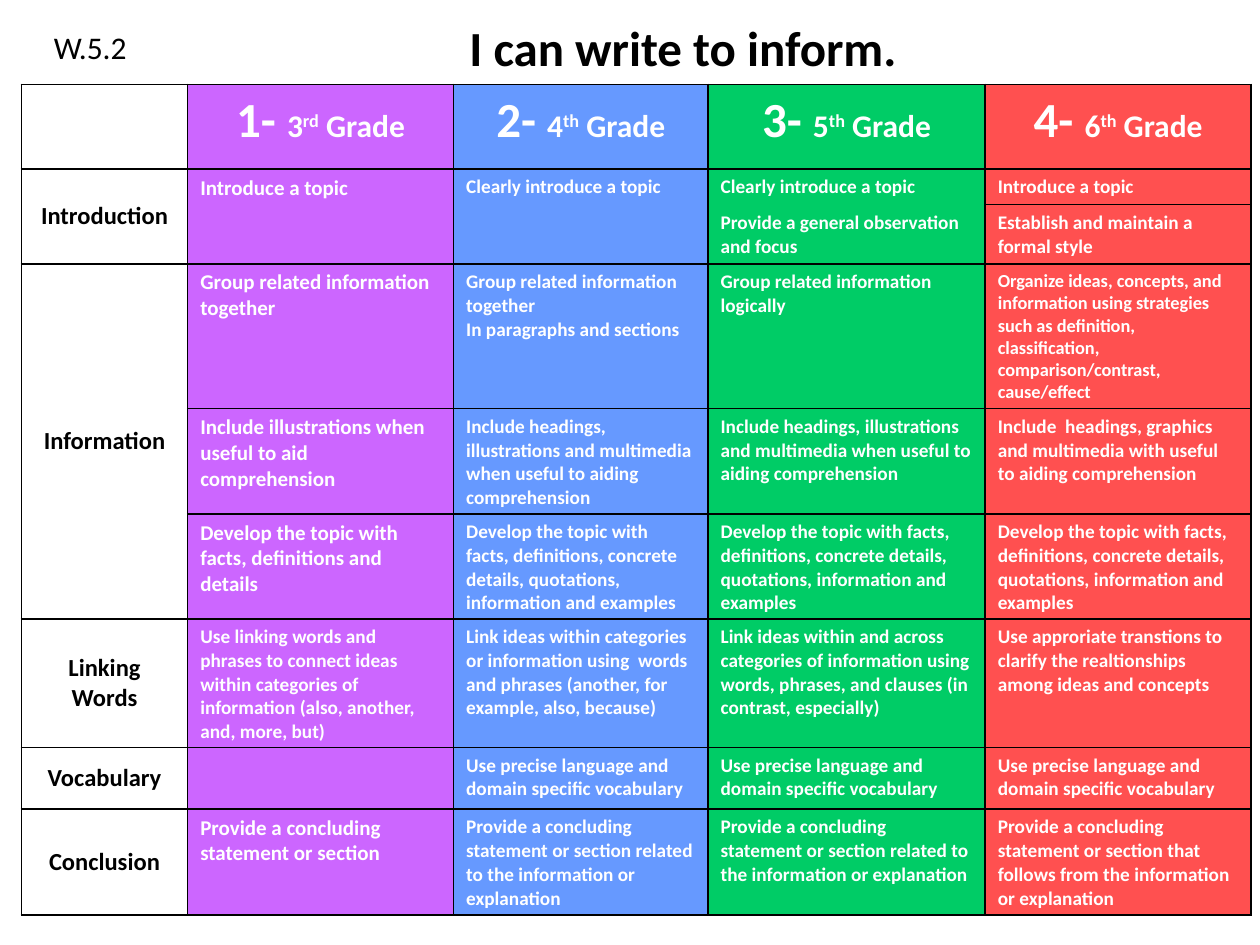
from lxml import etree
from pptx import Presentation, util as u
from pptx.dml.color import RGBColor
from pptx.enum import text
from pptx.oxml.ns import qn

THEME = {
    "font": "Calibri", "ink": "000000", "paper": "FFFFFF",
    "columns": ["FFFFFF", "CC66FF", "6699FF", "00CC66", "FF5050"],
    "title": 28, "standard": 18, "grade": 18, "category": 14,
    "column_sizes": [14, 12, 11, 11, 11], "line": 1,
}
TITLE = "I can write to inform."
STANDARD = "W.5.2"
GRADES = [("1- ", "3", "rd"), ("2- ", "4", "th"), ("3- ", "5", "th"), ("4- ", "6", "th")]
DEVELOP = ("Develop the topic with facts, definitions, concrete details, "
           "quotations, information and examples")
HEADINGS = "Include headings, illustrations and multimedia when useful to aiding comprehension"
PRECISE = "Use precise language and domain specific vocabulary"
CONCLUDE = "Provide a concluding  statement or section related to the information or explanation"
CRITERIA = [
    ["Introduction", "Introduce a topic", "Clearly introduce a topic",
     "Clearly introduce a topic", "Introduce a topic"],
    ["", "", "", "Provide a general observation and focus", ""],
    ["", "", "", "", "Establish and maintain a formal style"],
    ["Information", "Group related information together",
     "Group related information together\nIn paragraphs and sections",
     "Group related information logically",
     "Organize ideas, concepts, and information using strategies such as definition, "
     "classification, comparison/contrast, cause/effect"],
    ["", "Include illustrations when useful to aid comprehension", HEADINGS, HEADINGS,
     "Include  headings, graphics and multimedia with useful to aiding comprehension"],
    ["", "Develop the topic with facts, definitions and details", DEVELOP, DEVELOP, DEVELOP],
    ["Linking Words",
     "Use linking words and phrases to connect ideas within categories of information "
     "(also, another, and, more, but)",
     "Link ideas within categories  or information using  words and phrases "
     "(another, for example, also, because)",
     "Link ideas within and across categories of information using words, phrases, "
     "and clauses (in contrast, especially)",
     "Use approriate transtions to clarify the realtionships among ideas and concepts"],
    ["Vocabulary", "", PRECISE, PRECISE, PRECISE],
    ["Conclusion", "Provide a concluding statement or section", CONCLUDE, CONCLUDE,
     "Provide a concluding statement or section that follows from the information or explanation"],
]
SIZE_EXCEPTIONS = {(4, 4): 10.5, (7, 1): 11}
MERGES = [(0, 1, 3), (1, 1, 3), (2, 1, 3), (3, 2, 3), (4, 1, 2), (0, 4, 6)]
UNRULED = MERGES + [(3, 1, 3)]
COLUMN_WIDTHS = [1.32, 2.11, 2.02, 2.2, 2.11]
ROW_HEIGHTS = [0.67, 0.28, 0, 0.47, 1.15, 0.83, 0.83, 1.02, 0.49, 0.84]


def add_run(paragraph, words, size, color, bold=True):
    """Add one formatted run to a paragraph."""
    run = paragraph.add_run()
    run.text = words
    values = {"name": THEME["font"], "size": u.Pt(size), "bold": bold}
    for name, value in values.items():
        setattr(run.font, name, value)
    run.font.color.rgb = RGBColor.from_string(color)
    return run


def add_label(slide, words, box, size, bold, align, anchor):
    """Add a single-line text box."""
    frame = slide.shapes.add_textbox(*map(u.Inches, box)).text_frame
    frame.word_wrap = True
    frame.vertical_anchor = anchor
    frame.paragraphs[0].alignment = align
    add_run(frame.paragraphs[0], words, size, THEME["ink"], bold)


def rule_cell(cell, row, column):
    """Draw the cell's borders, leaving open the lines inside unruled blocks."""
    blocks = [block for block in UNRULED if block[0] == column]
    open_sides = {"lnT": any(first < row <= last for _, first, last in blocks),
                  "lnB": any(first <= row < last for _, first, last in blocks)}
    properties = cell._tc.get_or_add_tcPr()
    for side in ("lnL", "lnR", "lnT", "lnB"):
        line = etree.SubElement(properties, qn("a:" + side), w=str(u.Pt(THEME["line"])))
        if open_sides.get(side):
            etree.SubElement(line, qn("a:noFill"))
        else:
            fill = etree.SubElement(line, qn("a:solidFill"))
            etree.SubElement(fill, qn("a:srgbClr"), val=THEME["ink"])


def write_grade(cell, number, grade, ordinal):
    """Write a score and its grade with a raised ordinal."""
    paragraph = cell.text_frame.paragraphs[0]
    paragraph.alignment = text.PP_ALIGN.CENTER
    add_run(paragraph, number, THEME["title"], THEME["paper"])
    for words in (grade, ordinal, " Grade"):
        run = add_run(paragraph, words, THEME["grade"], THEME["paper"])
        if words == ordinal:
            run.font._element.set("baseline", "30000")


def write_criterion(cell, words, row, column):
    """Write a category name or a criterion."""
    is_category = column == 0
    size = SIZE_EXCEPTIONS.get((row, column), THEME["column_sizes"][column])
    if is_category:
        cell.vertical_anchor = text.MSO_ANCHOR.MIDDLE
    for index, line in enumerate(words.split("\n")):
        frame = cell.text_frame
        paragraph = frame.add_paragraph() if index else frame.paragraphs[0]
        if is_category:
            paragraph.alignment = text.PP_ALIGN.CENTER
        add_run(paragraph, line, size, THEME["ink" if is_category else "paper"])


def add_rubric(slide):
    """Add the rubric table."""
    box = (0.17, 0.67, sum(COLUMN_WIDTHS), sum(ROW_HEIGHTS))
    table = slide.shapes.add_table(
        len(ROW_HEIGHTS), len(COLUMN_WIDTHS), *map(u.Inches, box)).table
    for column, width in zip(table.columns, COLUMN_WIDTHS):
        column.width = u.Inches(width)
    for row, height in zip(table.rows, ROW_HEIGHTS):
        row.height = u.Inches(height)
    for column, first, last in MERGES:
        table.cell(first, column).merge(table.cell(last, column))
    for row in range(len(ROW_HEIGHTS)):
        for column, color in enumerate(THEME["columns"]):
            cell = table.cell(row, column)
            rule_cell(cell, row, column)
            cell.fill.solid()
            cell.fill.fore_color.rgb = RGBColor.from_string(color)
            if row == 0 and column:
                write_grade(cell, *GRADES[column - 1])
            elif row and CRITERIA[row - 1][column]:
                write_criterion(cell, CRITERIA[row - 1][column], row, column)


def main():
    """Build the writing rubric slide."""
    presentation = Presentation()
    presentation.slide_width, presentation.slide_height = u.Inches(10), u.Inches(7.5)
    slide = presentation.slides.add_slide(presentation.slide_layouts[6])
    add_label(slide, TITLE, (1.17, 0, 8.5, 0.75), THEME["title"], True,
              text.PP_ALIGN.CENTER, text.MSO_ANCHOR.MIDDLE)
    add_label(slide, STANDARD, (0.33, 0.17, 1.42, 0.4), THEME["standard"], False,
              text.PP_ALIGN.LEFT, text.MSO_ANCHOR.TOP)
    add_rubric(slide)
    presentation.save("out.pptx")


if __name__ == "__main__":
    main()
